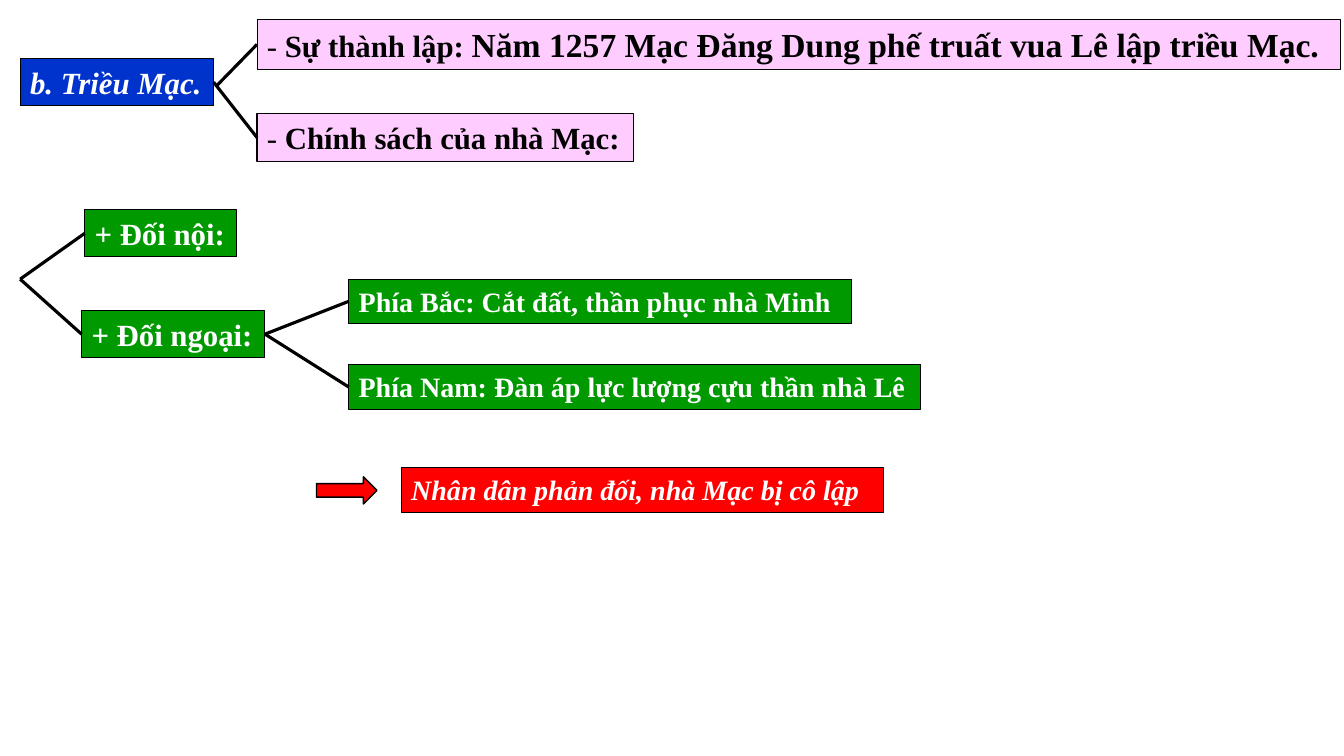
"""Build the slide that outlines the Mạc dynasty as a branching diagram."""
from dataclasses import dataclass
from typing import Optional

import pptx
import pptx.dml.color
import pptx.enum.shapes
import pptx.enum.text
import pptx.oxml
import pptx.oxml.ns
import pptx.shapes.autoshape
import pptx.slide
import pptx.util

Pt = pptx.util.Pt
RGBColor = pptx.dml.color.RGBColor
Shape = pptx.shapes.autoshape.Shape
MSO_SHAPE = pptx.enum.shapes.MSO_SHAPE

BLACK = RGBColor(0x00, 0x00, 0x00)
WHITE = RGBColor(0xFF, 0xFF, 0xFF)
BLUE = RGBColor(0x00, 0x33, 0xCC)
PINK = RGBColor(0xFF, 0xCC, 0xFF)
GREEN = RGBColor(0x00, 0x99, 0x00)
RED = RGBColor(0xFF, 0x00, 0x00)
FONT = "Times New Roman"
LEFT_SIDE, RIGHT_SIDE = 1, 3


@dataclass(frozen=True)
class Span:
    """A stretch of text that differs from its paragraph."""
    text: str
    bold: bool = True
    size: Optional[float] = None


@dataclass(frozen=True)
class Label:
    """A filled rectangle with one line of text."""
    name: str
    left: float
    top: float
    width: float
    height: float
    fill: RGBColor
    spans: tuple[Span, ...]
    size: float = 22
    color: RGBColor = WHITE
    italic: bool = False


@dataclass(frozen=True)
class Branch:
    """A line from a point, or from a label's right side, to a label's left side."""
    target: str
    point: tuple[float, float] = (0, 0)
    source: Optional[str] = None


LABELS = (
    Label("title", 14.4, 41.8, 138.2, 33.8, BLUE, (Span("b. Triều Mạc."),), italic=True),
    Label("founding", 183.6, 13.7, 774, 36, PINK,
          (Span("- ", False), Span("Sự thành lập: "),
           Span("Năm 1257 Mạc Đăng Dung phế truất vua Lê lập triều Mạc.", size=24)),
          color=BLACK),
    Label("policy", 183.6, 81.4, 269.3, 33.8, PINK,
          (Span("- ", False), Span("Chính sách của nhà Mạc:")), color=BLACK),
    Label("domestic", 60.5, 149.8, 108.7, 33.8, GREEN, (Span("+ Đối nội:"),)),
    Label("foreign", 58.3, 221.8, 131, 33.8, GREEN, (Span("+ Đối ngoại:"),)),
    Label("north", 249.1, 199.4, 359.3, 31.7, GREEN,
          (Span("Phía Bắc: Cắt đất, thần phục nhà Minh"),), size=20),
    Label("south", 249.1, 260.6, 408.2, 31.7, GREEN,
          (Span("Phía Nam: Đàn áp lực lượng cựu thần nhà Lê"),), size=20),
    Label("result", 286.6, 334.1, 344.2, 31.7, RED,
          (Span("Nhân dân phản đối, nhà Mạc bị cô lập"),), size=20, italic=True),
)
FORK = (14.4, 199.4)
BRANCHES = (
    Branch("founding", point=(154.8, 61.2)),
    Branch("policy", source="title"),
    Branch("domestic", point=FORK),
    Branch("foreign", point=FORK),
    Branch("north", source="foreign"),
    Branch("south", source="foreign"),
)


def add_filled(page: pptx.slide.Slide, kind: MSO_SHAPE, left: float, top: float,
               width: float, height: float, fill: RGBColor, line_width: float) -> Shape:
    """Add a preset shape with a solid fill and a black outline."""
    shape = page.shapes.add_shape(kind, Pt(left), Pt(top), Pt(width), Pt(height))
    shape.shadow.inherit = False
    shape.fill.solid()
    shape.fill.fore_color.rgb = fill
    shape.line.color.rgb = BLACK
    shape.line.width = Pt(line_width)
    return shape


def add_label(page: pptx.slide.Slide, label: Label) -> Shape:
    """Add a rectangle and write its spans."""
    box = add_filled(page, MSO_SHAPE.RECTANGLE, label.left, label.top,
                     label.width, label.height, label.fill, 0.75)
    frame = box.text_frame
    frame.word_wrap = True
    frame.vertical_anchor = pptx.enum.text.MSO_ANCHOR.TOP
    para = frame.paragraphs[0]
    para.alignment = pptx.enum.text.PP_ALIGN.LEFT
    para.font.name = FONT
    para.font.size = Pt(label.size)
    para.font.bold = True
    para.font.italic = label.italic
    para.font.color.rgb = label.color
    for span in label.spans:
        run = para.add_run()
        run.text = span.text
        if not span.bold:
            run.font.bold = False
        if span.size:
            run.font.size = Pt(span.size)
    return box


def add_branch(page: pptx.slide.Slide, branch: Branch, boxes: dict[str, Shape]) -> None:
    """Add a black line that ends at the left side of its target."""
    x, y = (Pt(value) for value in branch.point)
    line = page.shapes.add_connector(pptx.enum.shapes.MSO_CONNECTOR.STRAIGHT, x, y, x, y)
    if branch.source:
        line.begin_connect(boxes[branch.source], RIGHT_SIDE)
    line.end_connect(boxes[branch.target], LEFT_SIDE)
    line.line.color.rgb = BLACK
    line.line.width = Pt(2.25)
    effects = pptx.oxml.parse_xml(f"<a:effectLst {pptx.oxml.ns.nsdecls('a')}/>")
    line._element.spPr.append(effects)


def main() -> None:
    """Draw the slide and save the deck."""
    deck = pptx.Presentation()
    deck.slide_width, deck.slide_height = Pt(960), Pt(540)
    page = deck.slides.add_slide(deck.slide_layouts[6])
    boxes = {label.name: add_label(page, label) for label in LABELS}
    for branch in BRANCHES:
        add_branch(page, branch, boxes)
    add_filled(page, MSO_SHAPE.RIGHT_ARROW, 226.1, 340.6, 43.2, 19.4, RED, 1)
    deck.save("out.pptx")


if __name__ == "__main__":
    main()
